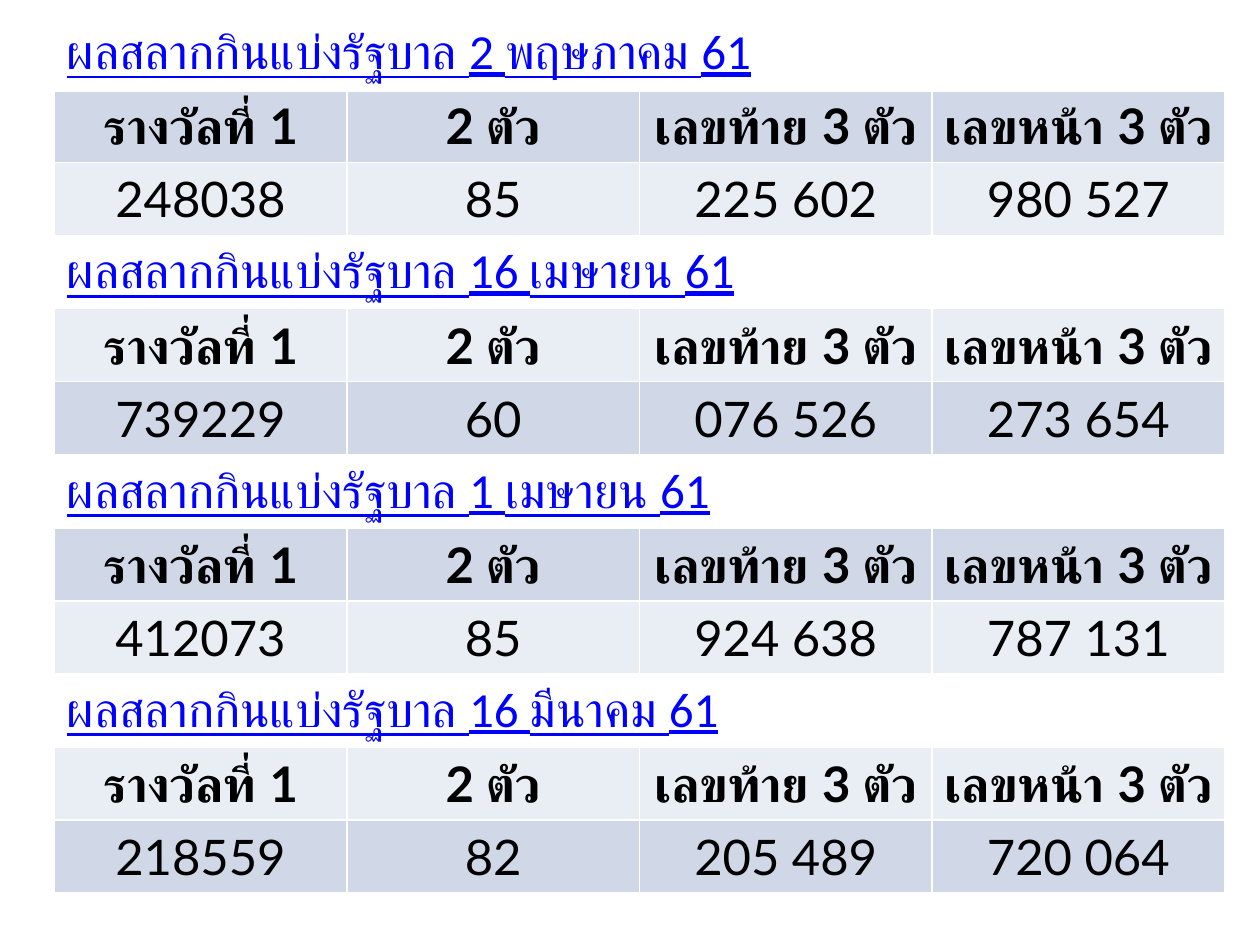
from lxml import etree
from pptx import Presentation
from pptx import util as u
from pptx.dml.color import RGBColor
from pptx.enum import text
from pptx.oxml import ns

COLORS = {
    "link": "0000FF",
    "ink": "000000",
    "dark_band": "D0D8E8",
    "light_band": "E9EDF4",
    "border": "FFFFFF",
}
HEADINGS = ["รางวัลที่ 1", "2 ตัว", "เลขท้าย 3 ตัว", "เลขหน้า 3 ตัว"]
DRAWS = [
    ("2 พฤษภาคม 61", ["248038", "85", "225 602", "980 527"]),
    ("16 เมษายน 61", ["739229", "60", "076 526", "273 654"]),
    ("1 เมษายน 61", ["412073", "85", "924 638", "787 131"]),
    ("16 มีนาคม 61", ["218559", "82", "205 489", "720 064"]),
]
ROWS_PER_DRAW = 3


def add_borders(cell, bottom=1):
    """Draw white borders on every side of a cell, widths in points."""
    properties = cell._tc.get_or_add_tcPr()
    for side, width in (("L", 1), ("R", 1), ("T", 1), ("B", bottom)):
        line = etree.SubElement(properties, ns.qn(f"a:ln{side}"), w=str(u.Pt(width)))
        fill = etree.SubElement(line, ns.qn("a:solidFill"))
        etree.SubElement(fill, ns.qn("a:srgbClr"), val=COLORS["border"])


def write_cell(cell, words, font, color, bold=False, underline=False):
    """Put one line of 28 point text in a cell, centred vertically."""
    cell.vertical_anchor = text.MSO_ANCHOR.MIDDLE
    para = cell.text_frame.paragraphs[0]
    para.text = words
    span = para.runs[0]
    span.font.name = font
    span.font.size = u.Pt(28)
    span.font.bold = bold
    span.font.underline = underline
    span.font.color.rgb = RGBColor.from_string(COLORS[color])
    return para


def fill_title_row(table, row, date):
    """Merge a row into one underlined draw title without a fill."""
    cells = [table.cell(row, column) for column in range(len(HEADINGS))]
    cells[0].merge(cells[-1])
    for cell in cells:
        add_borders(cell, bottom=3 if row == 0 else 1)
        cell.fill.background()
    write_cell(cells[0], f"ผลสลากกินแบ่งรัฐบาล {date}", "Calibri", "link", underline=True)


def fill_band_row(table, row, values, bold):
    """Write centred values on a band whose shade alternates by row."""
    band = COLORS["dark_band" if row % 2 else "light_band"]
    for column, value in enumerate(values):
        cell = table.cell(row, column)
        add_borders(cell, bottom=1)
        cell.fill.solid()
        cell.fill.fore_color.rgb = RGBColor.from_string(band)
        cell.margin_left = cell.margin_right = u.Inches(0.03)
        para = write_cell(cell, value, "Lato", "ink", bold=bold)
        para.alignment = text.PP_ALIGN.CENTER


def add_results_table(slide):
    """Add the empty results grid with equal rows and columns."""
    frame = slide.shapes.add_table(
        ROWS_PER_DRAW * len(DRAWS), len(HEADINGS),
        u.Inches(0.43), u.Inches(0.13), u.Inches(9.29), u.Inches(6.96))
    table = frame.table
    table.first_row = False
    table.horz_banding = False
    return table


def main():
    """Build the lottery results slide."""
    deck = Presentation()
    deck.slide_width, deck.slide_height = u.Inches(10), u.Inches(7.5)
    slide = deck.slides.add_slide(deck.slide_layouts[6])
    table = add_results_table(slide)
    for index, (date, numbers) in enumerate(DRAWS):
        row = index * ROWS_PER_DRAW
        fill_title_row(table, row, date)
        fill_band_row(table, row + 1, HEADINGS, bold=True)
        fill_band_row(table, row + 2, numbers, bold=False)
    deck.save("out.pptx")


if __name__ == "__main__":
    main()
